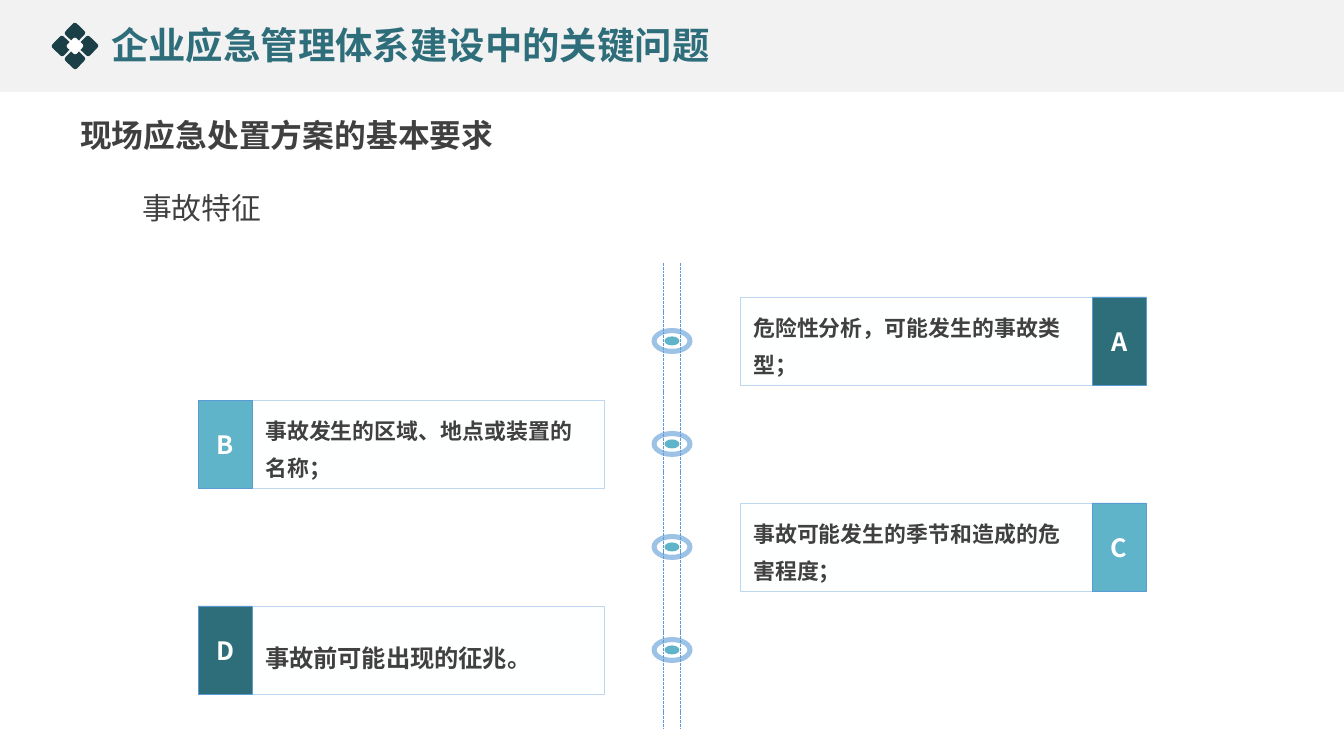
from lxml import etree
from pptx import Presentation, util as u
from pptx.dml.color import RGBColor
from pptx.enum import dml, shapes, text
from pptx.oxml.ns import qn

# Content
TITLE = "企业应急管理体系建设中的关键问题"
HEADING = "现场应急处置方案的基本要求"
TOPIC = "事故特征"
CARDS = [  # letter, tab colour, sentence, point size, line spacing
    ("A", "2E6D7A", "危险性分析，可能发生的事故类型；", 11.7, 1.4),
    ("B", "5FB4C9", "事故发生的区域、地点或装置的名称；", 11.7, 1.4),
    ("C", "5FB4C9", "事故可能发生的季节和造成的危害程度；", 11.7, 1.4),
    ("D", "2E6D7A", "事故前可能出现的征兆。", 13, 1.5),
]

# Style and layout, in px
FONT = "Noto Sans CJK SC"
TEAL, DARK, GREY, BLUE, WHITE = "2E6D7A", "1A3F46", "404040", "5B9BD5", "FFFFFF"
WIDTH, HEIGHT = 1344, 756
AXIS_X, AXIS_TOP, AXIS_BOTTOM, AXIS_HALF = WIDTH // 2, 263, 729, 8
ROW_TOP, ROW_STEP, CARD_H, CARD_W, TAB_W = 297, 103, 88, 352, 54
RIGHT_CARD, LEFT_TAB = 740, 198
ICON_X, ICON_Y, ICON_ARM = 75, 46, 13


def px(value):
    return u.Emu(round(value * 914400 / 134.4))


def colour(value):
    return RGBColor.from_string(value)


def write(frame, words, size, hue, bold=True, align=None, spacing=None):
    paragraph = frame.paragraphs[0]
    paragraph.alignment = align or text.PP_ALIGN.LEFT
    if spacing:
        paragraph.line_spacing = spacing
    run = paragraph.add_run()
    run.text = words
    font = run.font
    font.name, font.size, font.bold = FONT, u.Pt(size), bold
    font.color.rgb = colour(hue)
    east_asian = etree.SubElement(run._r.get_or_add_rPr(), qn("a:ea"))
    east_asian.set("typeface", FONT)


def add_label(slide, box, words, size, hue, bold=True):
    label = slide.shapes.add_textbox(*map(px, box))
    label.text_frame.word_wrap = True
    label.text_frame.auto_size = text.MSO_AUTO_SIZE.SHAPE_TO_FIT_TEXT
    write(label.text_frame, words, size, hue, bold)


def add_block(slide, kind, box, fill, line=None):
    shape = slide.shapes.add_shape(kind, *map(px, box))
    shape.shadow.inherit = False
    shape.fill.solid()
    shape.fill.fore_color.rgb = colour(fill)
    if line:
        shape.line.color.rgb = colour(line)
        shape.line.width = u.Pt(0.25)
    else:
        shape.line.fill.background()
    return shape


def add_centred(slide, kind, x, y, width, height, fill):
    return add_block(slide, kind, (x - width / 2, y - height / 2, width, height), fill)


def add_rail(slide, x):
    rail = slide.shapes.add_connector(
        shapes.MSO_CONNECTOR.STRAIGHT, px(x), px(AXIS_TOP), px(x), px(AXIS_BOTTOM))
    rail.line.color.rgb = colour(BLUE)
    rail.line.width = u.Pt(0.5)
    rail.line.dash_style = dml.MSO_LINE.SQUARE_DOT
    etree.SubElement(rail._element.spPr, qn("a:effectLst"))


def add_marker(slide, y):
    ring = add_centred(slide, shapes.MSO_SHAPE.DONUT, AXIS_X, y, 41, 26, BLUE)
    ring.adjustments[0] = 0.198
    alpha = etree.SubElement(ring._element.spPr.find(".//" + qn("a:srgbClr")), qn("a:alpha"))
    alpha.set("val", "60000")
    add_centred(slide, shapes.MSO_SHAPE.OVAL, AXIS_X, y, 15, 9, "5FB4C9")


def add_card(slide, index, letter, tab_fill, sentence, size, spacing):
    top = ROW_TOP + index * ROW_STEP
    if index % 2:
        tab_x, card_x = LEFT_TAB, LEFT_TAB + TAB_W
    else:
        tab_x, card_x = RIGHT_CARD + CARD_W, RIGHT_CARD
    rectangle = shapes.MSO_SHAPE.RECTANGLE
    card = add_block(slide, rectangle, (card_x, top, CARD_W, CARD_H), "FEFFFF", "BDD7EE")
    write(card.text_frame, sentence, size, GREY, spacing=spacing)
    add_marker(slide, top + CARD_H / 2)
    tab = add_block(slide, rectangle, (tab_x, top, TAB_W, CARD_H), tab_fill, BLUE)
    write(tab.text_frame, letter, 13.5, WHITE, align=text.PP_ALIGN.CENTER)
    for shape in (card, tab):
        shape.text_frame.word_wrap = True
        shape.text_frame.vertical_anchor = text.MSO_ANCHOR.MIDDLE


def main():
    presentation = Presentation()
    presentation.slide_width, presentation.slide_height = px(WIDTH), px(HEIGHT)
    slide = presentation.slides.add_slide(presentation.slide_layouts[6])

    # Header band with its diamond ornament
    add_block(slide, shapes.MSO_SHAPE.RECTANGLE, (0, 0, WIDTH, 92), "F2F2F2")
    diamonds = [(0, -1, 16, DARK), (-1, 0, 16, DARK), (1, 0, 16, DARK),
                (0, 1, 16, DARK), (0, 0, 13, WHITE)]
    for across, down, side, fill in diamonds:
        diamond = add_centred(
            slide, shapes.MSO_SHAPE.ROUNDED_RECTANGLE,
            ICON_X + across * ICON_ARM, ICON_Y + down * ICON_ARM, side, side, fill)
        diamond.rotation = 43.8

    # Headings
    add_label(slide, (98, 16, 958, 59), TITLE, 20, TEAL)
    add_label(slide, (67, 109, 538, 52), HEADING, 17, GREY)
    add_label(slide, (129, 183, 156, 50), TOPIC, 16, GREY, bold=False)

    # Timeline
    for side in (-1, 1):
        add_rail(slide, AXIS_X + side * AXIS_HALF)
    for index, card in enumerate(CARDS):
        add_card(slide, index, *card)

    presentation.save("out.pptx")


if __name__ == "__main__":
    main()
